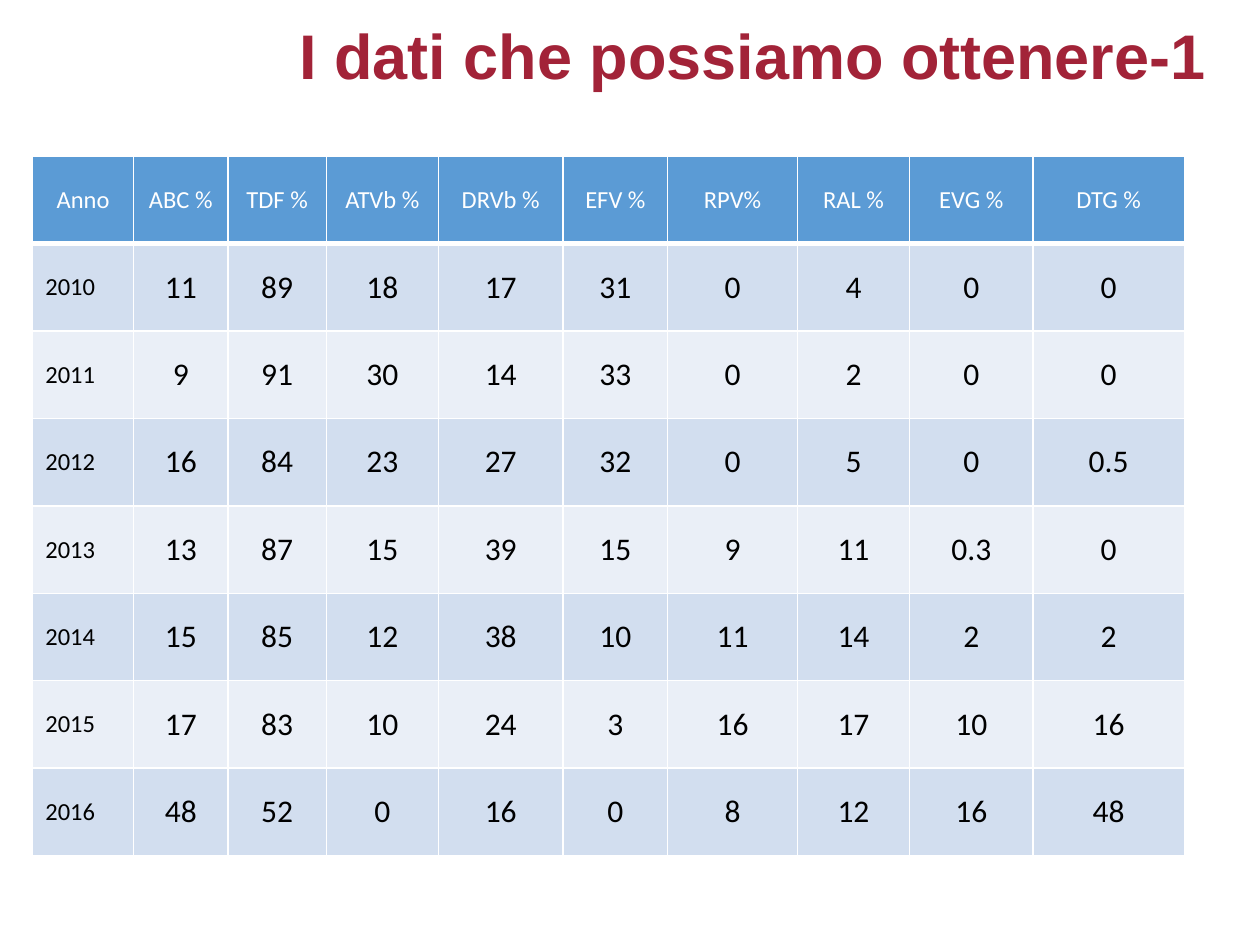
from lxml import etree
from pptx import Presentation
from pptx.dml.color import RGBColor
from pptx.enum.text import MSO_ANCHOR, PP_ALIGN
from pptx.oxml.ns import qn
from pptx.util import Inches, Pt

LEFT, CENTER = PP_ALIGN.LEFT, PP_ALIGN.CENTER
TOP, MIDDLE = MSO_ANCHOR.TOP, MSO_ANCHOR.MIDDLE

TITLE = "I dati che possiamo ottenere-1"
HEADERS = ["Anno", "ABC %", "TDF %", "ATVb %", "DRVb %",
           "EFV %", "RPV%", "RAL %", "EVG %", "DTG %"]
YEARS = [
    (2010, 11, 89, 18, 17, 31, 0, 4, 0, 0),
    (2011, 9, 91, 30, 14, 33, 0, 2, 0, 0),
    (2012, 16, 84, 23, 27, 32, 0, 5, 0, 0.5),
    (2013, 13, 87, 15, 39, 15, 9, 11, 0.3, 0),
    (2014, 15, 85, 12, 38, 10, 11, 14, 2, 2),
    (2015, 17, 83, 10, 24, 3, 16, 17, 10, 16),
    (2016, 48, 52, 0, 16, 0, 8, 12, 16, 48),
]
COLUMN_WIDTHS = [0.8, 0.75, 0.78, 0.89, 0.99, 0.83, 1.03, 0.89, 0.98, 1.2]
TABLE_LEFT, TABLE_TOP, TABLE_HEIGHT = 0.26, 1.24, 5.55

TITLE_RED, HEADER_BLUE = "A22338", "5B9BD5"
BANDS = ["D2DEEF", "EAEFF7"]
WHITE, BLACK = "FFFFFF", "000000"


def color(value):
    return RGBColor.from_string(value)


def write(paragraph, text, font_name, size, text_color, alignment, bold=False):
    paragraph.alignment = alignment
    run = paragraph.add_run()
    run.text = text
    run.font.name = font_name
    run.font.size = Pt(size)
    run.font.bold = bold
    run.font.color.rgb = color(text_color)


def set_borders(cell, bottom_width):
    """White lines of 1 pt around the cell, except for the bottom one."""
    properties = cell._tc.get_or_add_tcPr()
    for side, width in (("L", 1), ("R", 1), ("T", 1), ("B", bottom_width)):
        line = etree.SubElement(properties, qn(f"a:ln{side}"), w=str(Pt(width)))
        fill = etree.SubElement(line, qn("a:solidFill"))
        etree.SubElement(fill, qn("a:srgbClr"), val=WHITE)


def add_title(slide):
    box = slide.shapes.add_textbox(Inches(2.28), Inches(0.15), Inches(7.44), Inches(1.1))
    frame = box.text_frame
    frame.word_wrap = True
    frame.vertical_anchor = TOP
    paragraph = frame.paragraphs[0]
    paragraph.line_spacing = 0.9
    write(paragraph, TITLE, "Arial", 36, TITLE_RED, LEFT, bold=True)


def add_data_table(slide):
    rows = [HEADERS, *YEARS]
    table = slide.shapes.add_table(
        len(rows), len(HEADERS), Inches(TABLE_LEFT), Inches(TABLE_TOP),
        Inches(sum(COLUMN_WIDTHS)), Inches(TABLE_HEIGHT)).table
    for column, width in zip(table.columns, COLUMN_WIDTHS):
        column.width = Inches(width)

    for row_index, values in enumerate(rows):
        is_header = row_index == 0
        fill_color = HEADER_BLUE if is_header else BANDS[(row_index - 1) % 2]
        for column_index, value in enumerate(values):
            is_year = column_index == 0 and not is_header
            cell = table.cell(row_index, column_index)
            set_borders(cell, 3 if is_header else 1)
            cell.fill.solid()
            cell.fill.fore_color.rgb = color(fill_color)
            cell.vertical_anchor = MIDDLE
            write(cell.text_frame.paragraphs[0], str(value), "Calibri",
                  14 if is_header or is_year else 18,
                  WHITE if is_header else BLACK,
                  LEFT if is_year else CENTER)


def main():
    presentation = Presentation()
    presentation.slide_width = Inches(10)
    presentation.slide_height = Inches(7.5)
    slide = presentation.slides.add_slide(presentation.slide_layouts[6])
    add_title(slide)
    add_data_table(slide)
    presentation.save("out.pptx")


if __name__ == "__main__":
    main()
